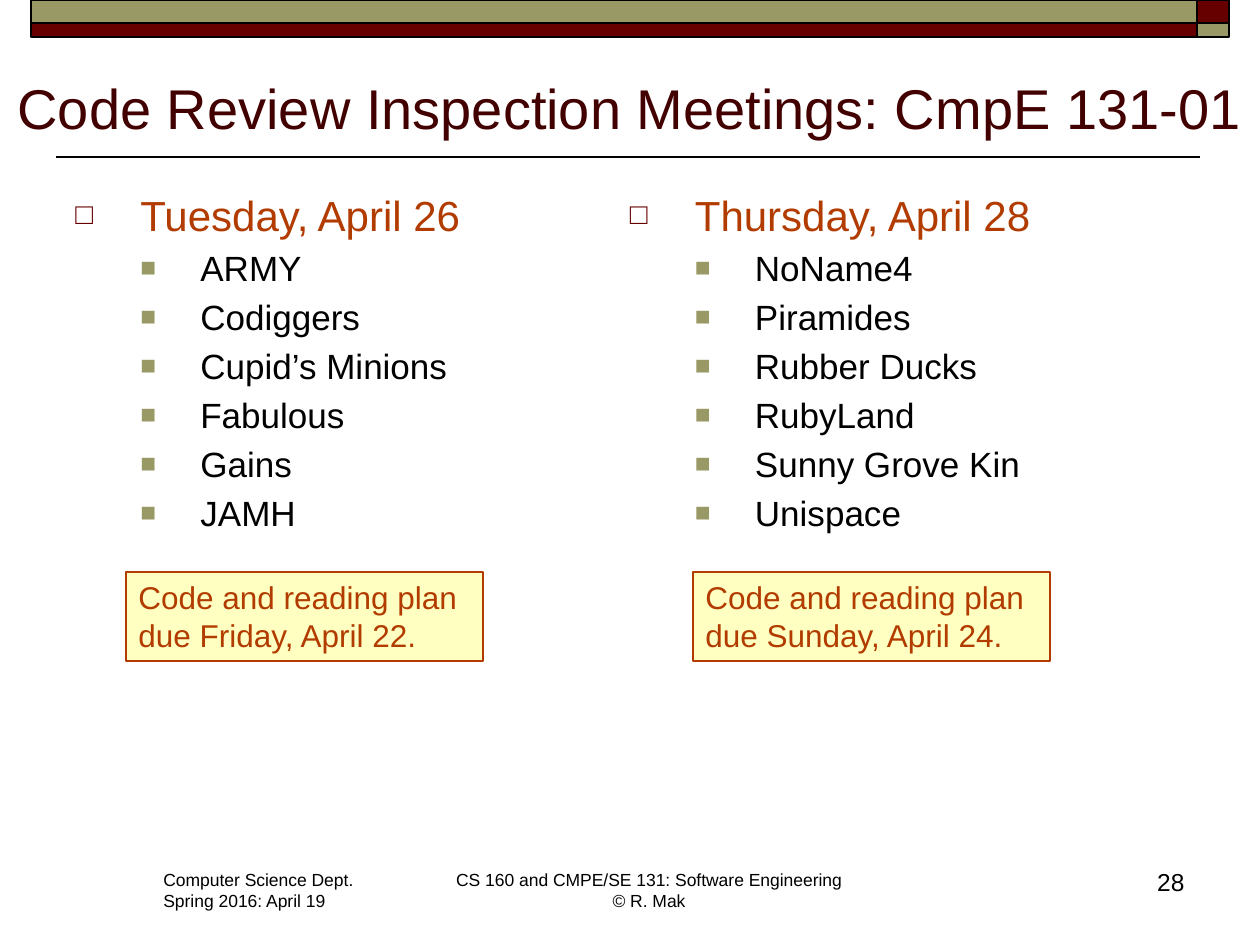
from dataclasses import dataclass

from pptx import Presentation
from pptx.dml.color import RGBColor
from pptx.enum.shapes import MSO_CONNECTOR, MSO_SHAPE
from pptx.enum.text import MSO_ANCHOR, MSO_AUTO_SIZE, PP_ALIGN
from pptx.oxml.ns import qn
from pptx.util import Pt
from lxml.etree import SubElement

EMU_PER_PX = 914400 / 126


@dataclass(frozen=True)
class Theme:
    font: str = "Arial"
    ink: str = "000000"
    title: str = "420000"
    maroon: str = "660000"
    olive: str = "999966"
    rust: str = "B23C00"
    cream: str = "FFFFC2"
    title_size: int = 32
    heading_size: int = 24
    team_size: int = 20
    note_size: int = 18
    number_size: int = 14
    footer_size: int = 10


THEME = Theme()

MEETINGS = [
    ("Tuesday, April 26",
     ["ARMY", "Codiggers", "Cupid’s Minions", "Fabulous", "Gains", "JAMH"],
     "due Friday, April 22."),
    ("Thursday, April 28",
     ["NoName4", "Piramides", "Rubber Ducks", "RubyLand", "Sunny Grove Kin", "Unispace"],
     "due Sunday, April 24."),
]


def px(n):
    return round(n * EMU_PER_PX)


def rgb(color):
    return RGBColor.from_string(color)


def add_rect(s, box, fill, line, width=1):
    sp = s.shapes.add_shape(MSO_SHAPE.RECTANGLE, *map(px, box))
    sp.shadow.inherit = False
    sp.fill.solid()
    sp.fill.fore_color.rgb = rgb(fill)
    sp.line.color.rgb = rgb(line)
    sp.line.width = Pt(width)
    return sp


def add_box(s, box):
    return s.shapes.add_textbox(*map(px, box))


def set_bullet(p, char, color, percent, left, hanging):
    pPr = p._p.get_or_add_pPr()
    pPr.set("marL", str(px(left)))
    pPr.set("indent", str(-px(hanging)))
    SubElement(SubElement(pPr, qn("a:buClr")), qn("a:srgbClr")).set("val", color)
    SubElement(pPr, qn("a:buSzPct")).set("val", str(percent * 1000))
    SubElement(pPr, qn("a:buFont")).set("typeface", THEME.font)
    SubElement(pPr, qn("a:buChar")).set("char", char)


def format_paragraph(p, text, size, color=THEME.ink, align=PP_ALIGN.LEFT, before=0):
    p.text = text
    p.alignment = align
    p.space_before = Pt(before)
    for r in p.runs:
        r.font.name = THEME.font
        r.font.size = Pt(size)
        r.font.color.rgb = rgb(color)


def write(sp, text, wrap=True, anchor=MSO_ANCHOR.TOP, **fmt):
    tf = sp.text_frame
    tf.word_wrap = wrap
    tf.auto_size = MSO_AUTO_SIZE.NONE if wrap else MSO_AUTO_SIZE.SHAPE_TO_FIT_TEXT
    tf.vertical_anchor = anchor
    for i, line in enumerate(text.split("\n")):
        p = tf.paragraphs[0] if i == 0 else tf.add_paragraph()
        format_paragraph(p, line, **fmt)


def add_banner(s, x, y, w, h):
    corner, top = 32, 23
    split = x + w - corner
    for row_y, row_h, bar, end in [
        (y, top, THEME.olive, THEME.maroon),
        (y + top, h - top, THEME.maroon, THEME.olive),
    ]:
        add_rect(s, (x, row_y, w - corner, row_h), bar, THEME.ink)
        add_rect(s, (split, row_y, corner, row_h), end, THEME.ink)


def add_title(s, x, y, w, h):
    write(add_box(s, (x, y, w, h)), "Code Review Inspection Meetings: CmpE 131-01",
          anchor=MSO_ANCHOR.BOTTOM, size=THEME.title_size, color=THEME.title,
          align=PP_ALIGN.CENTER)
    rule_y = y + h + 10
    rule = s.shapes.add_connector(
        MSO_CONNECTOR.STRAIGHT, px(x + w - 60), px(rule_y), px(x + 56), px(rule_y))
    rule.line.color.rgb = rgb(THEME.ink)
    rule.line.width = Pt(1)
    SubElement(rule._element.spPr, qn("a:effectLst"))


def add_schedule(s, x, y, w, h):
    tf = add_box(s, (x, y, w, h)).text_frame
    tf.word_wrap = True
    tf._txBody.bodyPr.set("numCol", str(len(MEETINGS)))
    p = tf.paragraphs[0]
    for i, (day, teams, _) in enumerate(MEETINGS):
        if i:
            p = tf.add_paragraph()
        set_bullet(p, "□", THEME.maroon, 70, 65, 65)
        format_paragraph(p, day, THEME.heading_size, THEME.rust)
        for team in teams:
            p = tf.add_paragraph()
            p.level = 1
            set_bullet(p, "■", THEME.olive, 75, 125, 60)
            format_paragraph(p, team, THEME.team_size, before=4)


def add_notes(s, x, y, w, h):
    for i, (_, _, due) in enumerate(MEETINGS):
        sp = add_rect(s, (x + i * 567, y, w, h), THEME.cream, THEME.rust, 0.75)
        write(sp, f"Code and reading plan\n{due}", wrap=False,
              size=THEME.note_size, color=THEME.rust)


def add_footer(s, x, y, w, h):
    write(add_box(s, (x, y, 224, h)), "Computer Science Dept.\nSpring 2016: April 19",
          wrap=False, size=THEME.footer_size)
    write(add_box(s, (x + 290, y, 416, h)),
          "CS 160 and CMPE/SE 131: Software Engineering\v© R. Mak",
          wrap=False, size=THEME.footer_size, align=PP_ALIGN.CENTER)
    write(add_box(s, (x + w - 262, y - 2, 262, h + 8)), "28",
          size=THEME.number_size, align=PP_ALIGN.RIGHT)


def main():
    prs = Presentation()
    prs.slide_width, prs.slide_height = px(1260), px(945)
    s = prs.slides.add_slide(prs.slide_layouts[6])
    add_banner(s, 31, 0, 1198, 37)
    add_title(s, 0, 57, 1260, 90)
    add_footer(s, 151, 863, 1046, 55)
    add_notes(s, 126, 572, 357, 89)
    add_schedule(s, 63, 183, 1134, 378)
    prs.save("out.pptx")


if __name__ == "__main__":
    main()
